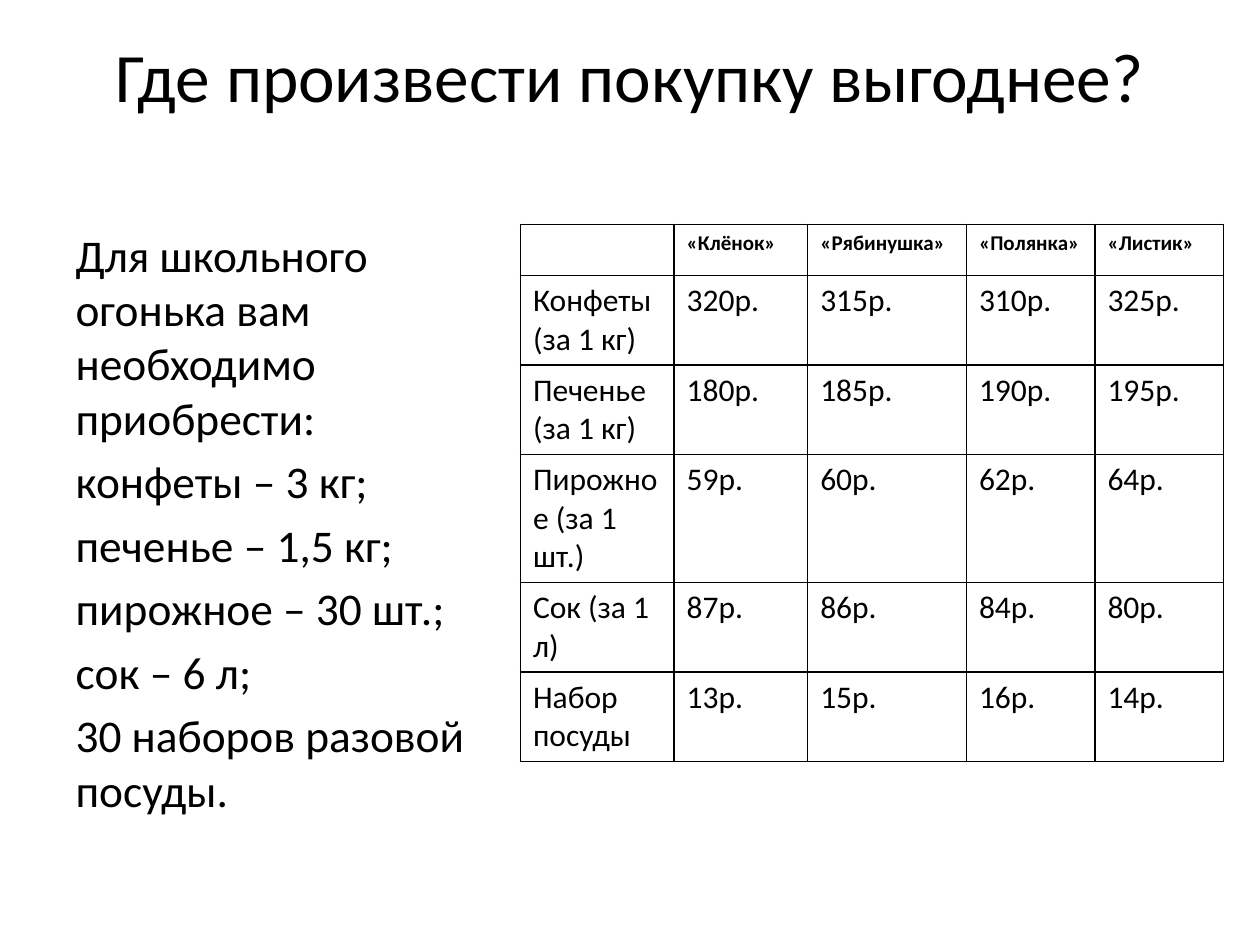
from copy import deepcopy
from pptx import Presentation
from pptx.dml.color import RGBColor
from pptx.enum.text import MSO_ANCHOR, MSO_AUTO_SIZE, PP_ALIGN
from pptx.oxml.ns import qn
from pptx.util import Pt
from lxml.etree import SubElement

INK = "000000"
TITLE = "Где произвести покупку выгоднее?\v"
LIST = [
    "Для школьного огонька вам необходимо приобрести:",
    "конфеты – 3 кг;",
    "печенье – 1,5 кг;",
    "пирожное – 30 шт.;",
    "сок – 6 л;",
    "30 наборов разовой посуды.",
]
SHOPS = ["", "«Клёнок»", "«Рябинушка»", "«Полянка»", "«Листик»"]
PRICES = [
    ("Конфеты (за 1 кг)", 320, 315, 310, 325),
    ("Печенье (за 1 кг)", 180, 185, 190, 195),
    ("Пирожное (за 1 шт.)", 59, 60, 62, 64),
    ("Сок (за 1 л)", 87, 86, 84, 80),
    ("Набор посуды", 13, 15, 16, 14),
]
COLS = [87.84, 76.32, 90.72, 73.44, 73.44]
ROWS = [29.2, 51.1, 51.1, 73.1, 51.1, 51.1]


def paint(color, ink):
    color.rgb = RGBColor.from_string(ink)


def style(frame, size, bold=False):
    for para in frame.paragraphs:
        for run in para.runs:
            font = run.font
            font.name, font.size, font.bold = "Calibri", Pt(size), bold
            paint(font.color, INK)


def place(shape, left, top, width, height):
    shape.left, shape.top = Pt(left), Pt(top)
    shape.width, shape.height = Pt(width), Pt(height)


def add_title(slide):
    title = slide.shapes.title
    place(title, 36, 21.6, 648, 90)
    frame = title.text_frame
    frame.text = TITLE
    frame.auto_size = MSO_AUTO_SIZE.NONE
    frame.vertical_anchor = MSO_ANCHOR.MIDDLE
    para = frame.paragraphs[0]
    para.alignment = PP_ALIGN.CENTER
    style(frame, 39.6)
    # The empty second line takes the size of the first.
    props = para.runs[0].font._element
    para._p.find(qn("a:br")).append(deepcopy(props))
    SubElement(para._p, qn("a:endParaRPr"), sz=props.get("sz"))


def add_list(slide):
    body = slide.placeholders[1]
    place(body, 36, 126, 239, 356.4)
    frame = body.text_frame
    frame.text = "\n".join(LIST)
    frame.auto_size = MSO_AUTO_SIZE.NONE
    style(frame, 25.9)
    for para in frame.paragraphs:
        props = para._p.get_or_add_pPr()
        props.set("marL", "0")
        props.set("indent", "0")
        SubElement(props, qn("a:buNone"))


def frame_cell(cell):
    props = cell._tc.get_or_add_tcPr()
    for side in ("lnL", "lnR", "lnT", "lnB"):
        line = SubElement(props, qn(f"a:{side}"), w=str(Pt(1)))
        fill = SubElement(line, qn("a:solidFill"))
        SubElement(fill, qn("a:srgbClr"), val=INK)
    cell.fill.background()


def add_prices(slide):
    shape = slide.shapes.add_table(
        len(ROWS), len(COLS), Pt(297.4), Pt(128.2), Pt(sum(COLS)), Pt(sum(ROWS)))
    table = shape.table
    table.first_row = table.horz_banding = False
    for col, width in zip(table.columns, COLS):
        col.width = Pt(width)
    texts = [SHOPS] + [[name] + [f"{cost}р." for cost in costs]
                       for name, *costs in PRICES]
    for num, (row, height, line) in enumerate(zip(table.rows, ROWS, texts)):
        row.height = Pt(height)
        for cell, text in zip(row.cells, line):
            cell.text_frame.text = text
            style(cell.text_frame, 18 if num else 12, bold=num == 0)
            frame_cell(cell)


def main():
    deck = Presentation()
    deck.slide_width, deck.slide_height = Pt(720), Pt(540)
    slide = deck.slides.add_slide(deck.slide_layouts[1])
    add_title(slide)
    add_list(slide)
    add_prices(slide)
    deck.save("out.pptx")


if __name__ == "__main__":
    main()
